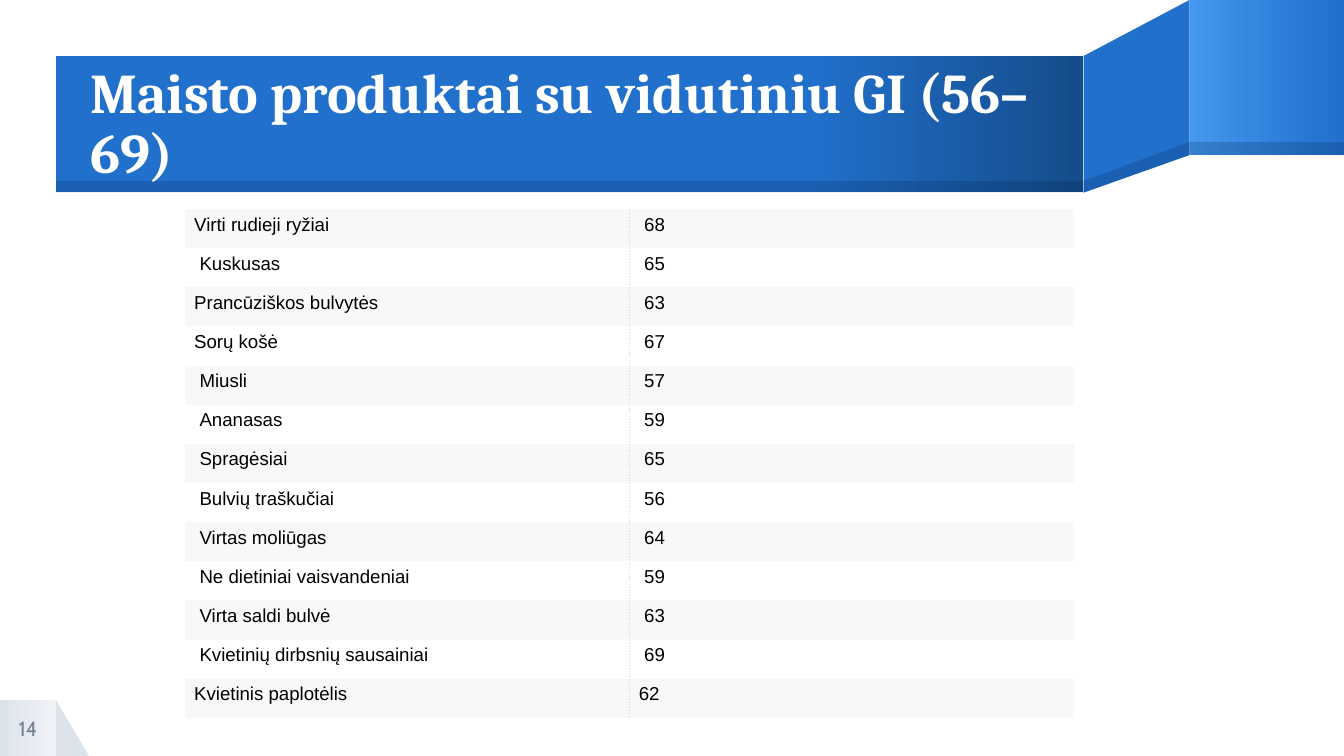
from lxml import etree
from pptx import Presentation
from pptx.dml.color import RGBColor
from pptx.enum.shapes import MSO_SHAPE
from pptx.enum.text import MSO_ANCHOR, PP_ALIGN
from pptx.oxml.ns import qn
from pptx.util import Inches, Pt

RECT = MSO_SHAPE.RECTANGLE
WEDGE = MSO_SHAPE.RIGHT_TRIANGLE
MIDDLE = MSO_ANCHOR.MIDDLE
CENTER = PP_ALIGN.CENTER
WIDTH, HEIGHT = Inches(10), Inches(5.625)
UNIT = WIDTH / 24
PLAIN = "{2D5ABB26-0587-4C30-8999-92F81FD0307C}"

HEX = {
    "blue": "2170CC", "light": "4397EE", "deep": "154C8A", "shade": "001F46",
    "grey": "DDE3EB", "pale": "F0F3F7", "number": "748394", "white": "FFFFFF",
    "black": "000000", "band": "F7F9F9", "rule": "D3D3D3",
}

FOODS = [
    ("Virti rudieji ryžiai", 68), ("Kuskusas", 65),
    ("Prancūziškos bulvytės", 63), ("Sorų košė", 67), ("Miusli", 57),
    ("Ananasas", 59), ("Spragėsiai", 65), ("Bulvių traškučiai", 56),
    ("Virtas moliūgas", 64), ("Ne dietiniai vaisvandeniai", 59),
    ("Virta saldi bulvė", 63), ("Kvietinių dirbsnių sausainiai", 69),
    ("Kvietinis paplotėlis", 62),
]
FLUSH = {(0, 0), (2, 0), (3, 0), (12, 0), (12, 1)}


def grid(*units):
    """Turn grid units into slide lengths."""
    return [round(unit * UNIT) for unit in units]


def color(name):
    """Look up a named colour."""
    return RGBColor.from_string(HEX[name])


def paint(shape, name, alpha=None):
    """Give a shape a flat fill, with no line or shadow."""
    shape.shadow.inherit = False
    shape.line.fill.background()
    shape.fill.solid()
    shape.fill.fore_color.rgb = color(name)
    if alpha:
        tint = shape.fill._xPr.find(".//" + qn("a:srgbClr"))
        etree.SubElement(tint, qn("a:alpha"), val=str(alpha * 1000))


def block(slide, box, name, alpha=None, kind=RECT):
    """Add a flat preset shape."""
    shape = slide.shapes.add_shape(kind, *grid(*box))
    paint(shape, name, alpha)
    return shape


def fade(slide, box, first, last, start=0):
    """Add a rectangle that shades from left to right."""
    fill = block(slide, box, first).fill
    fill.gradient()
    fill.gradient_angle = 0
    for stop, name, place in zip(fill.gradient_stops, (first, last), (start, 1)):
        stop.color.rgb = color(name)
        stop.position = place


def fold(slide, points, name, alpha=None):
    """Add a closed outline."""
    first, *rest = [grid(*point) for point in points]
    pen = slide.shapes.build_freeform(*first, scale=1)
    pen.add_line_segments(rest, close=True)
    paint(pen.convert_to_shape(), name, alpha)


def style(para, face, size, name, bold=False):
    """Set the font of a paragraph."""
    font = para.font
    font.name, font.size, font.bold = face, Pt(size), bold
    font.color.rgb = color(name)


def write(shape, text):
    """Fill a text frame without margins and return its paragraph."""
    frame = shape.text_frame
    frame.word_wrap = True
    frame.vertical_anchor = MIDDLE
    frame.margin_left = frame.margin_right = 0
    frame.margin_top = frame.margin_bottom = 0
    frame.text = text
    return frame.paragraphs[0]


def ribbon(slide):
    """Draw the folded ribbon and the page corner."""
    block(slide, (1, 12.5, 0.59, 1), "grey", kind=WEDGE)
    fade(slide, (0, 12.5, 1, 1), "grey", "pale")
    left, right = 19.35, 21.24
    fold(slide, [(right, 0), (left, 1), (left, 3.44), (right, 2.77)], "blue")
    fade(slide, (right, 0, 24 - right, 2.77), "light", "blue")
    fade(slide, (1, 1, left - 1, 2.44), "blue", "deep", 0.73)
    edge = [(right, 2.54), (left, 3.23), (left, 3.44), (right, 2.77)]
    fold(slide, edge, "shade", 20)
    block(slide, (right, 2.54, 24 - right, 0.23), "shade", 20)
    block(slide, (1, 3.23, left - 1, 0.21), "shade", 20)


def heading(slide, text):
    """Place the title on the ribbon."""
    title = slide.shapes.title
    title.left, title.top, title.width, title.height = grid(1.61, 1.03, 17.74, 2.42)
    para = write(title, text)
    para.alignment = PP_ALIGN.LEFT
    para.line_spacing = 0.9
    style(para, "Cambria", 30, "white", True)


def number(slide, text):
    """Put the page number in the corner."""
    para = write(slide.shapes.add_textbox(*grid(0, 12.5, 1, 1)), text)
    para.alignment = CENTER
    style(para, "Cabin", 11, "number")


def border(cell, side):
    """Draw a dotted rule on one side of a cell."""
    line = etree.Element(qn("a:" + side), w=str(Pt(0.5)))
    fill = etree.SubElement(line, qn("a:solidFill"))
    etree.SubElement(fill, qn("a:srgbClr"), val=HEX["rule"])
    etree.SubElement(line, qn("a:prstDash"), val="sysDot")
    cell._tc.get_or_add_tcPr().insert(0, line)


def listing(slide):
    """Add the banded table of foods."""
    box = grid(3.3, 3.73, 15.88, 0.7 * len(FOODS))
    table = slide.shapes.add_table(len(FOODS), 2, *box).table
    table.first_row = table.horz_banding = False
    table._tbl.tblPr.find(qn("a:tableStyleId")).text = PLAIN
    for row, food in enumerate(FOODS):
        for col, value in enumerate(food):
            cell = table.cell(row, col)
            cell.text = str(value)
            cell.margin_left = Inches(0.07 if (row, col) in FLUSH else 0.11)
            cell.margin_right = Inches(0.07)
            cell.margin_top = cell.margin_bottom = Inches(0.04)
            cell.fill.solid()
            cell.fill.fore_color.rgb = color("white" if row % 2 else "band")
            style(cell.text_frame.paragraphs[0], "Arial", 10, "black")
            border(cell, "lnL" if col else "lnR")


def main():
    """Build and save the slide."""
    deck = Presentation()
    deck.slide_width, deck.slide_height = WIDTH, HEIGHT
    slide = deck.slides.add_slide(deck.slide_layouts[5])
    ribbon(slide)
    heading(slide, "Maisto produktai su vidutiniu GI (56–69)")
    number(slide, "14")
    listing(slide)
    tree = slide.shapes._spTree
    tree.insert(-3, slide.shapes.title._element)
    deck.save("out.pptx")


if __name__ == "__main__":
    main()
